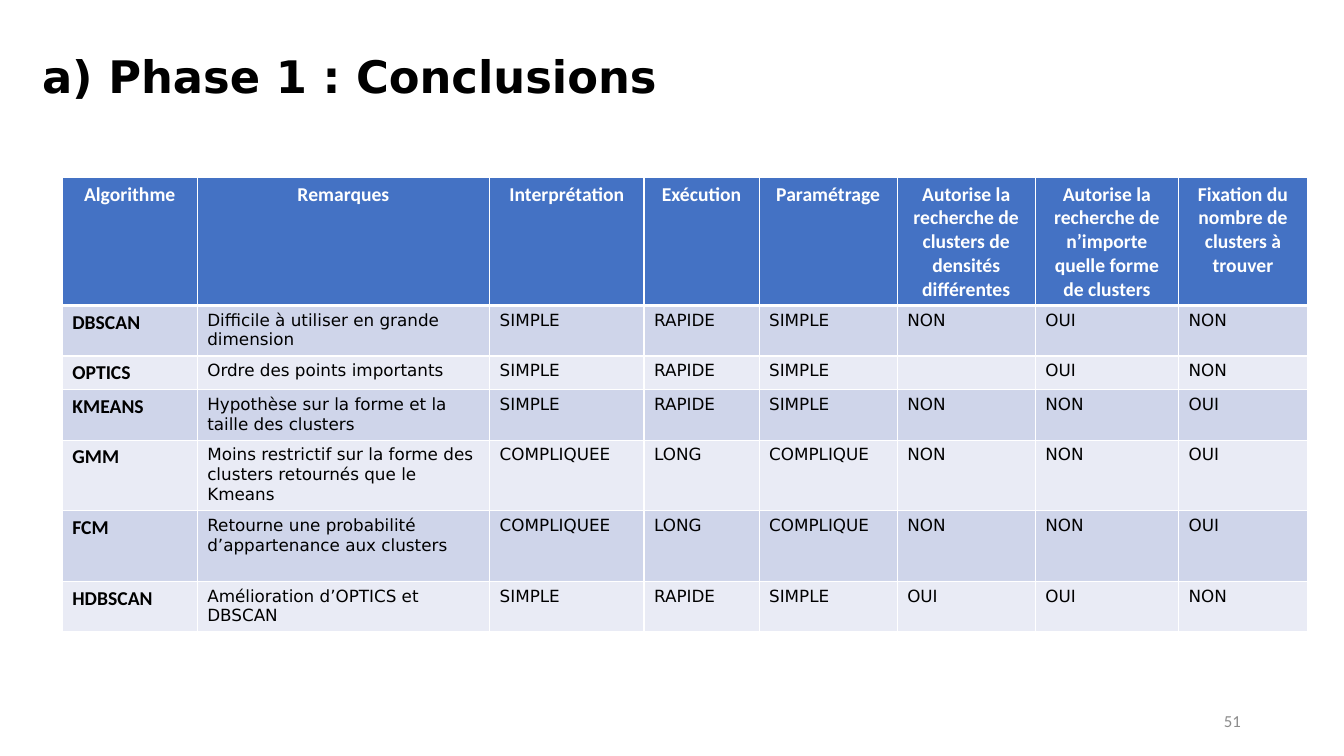
import pptx
import pptx.dml.color
import pptx.enum.text
import pptx.oxml
import pptx.oxml.ns
import pptx.util
from pptx.util import Cm

ALIGN = pptx.enum.text.PP_ALIGN
ANCHOR = pptx.enum.text.MSO_ANCHOR
COLORS = {
    "text": "000000",
    "page number": "8C8C8C",
    "header": "4472C4",
    "odd row": "CFD5EA",
    "even row": "E9EBF5",
    "white": "FFFFFF",
}
COLUMN_WIDTHS = [3.4, 7.37, 3.89, 2.9, 3.48, 3.48, 3.61, 3.25]
ROW_HEIGHTS = [3.23, 1.27, 0.84, 1.27, 1.78, 1.78, 1.27]
ROWS = [
    ["Algorithme", "Remarques", "Interprétation", "Exécution", "Paramétrage",
     "Autorise la recherche de clusters de densités différentes",
     "Autorise la recherche de n’importe quelle forme de clusters",
     "Fixation du nombre de clusters à trouver"],
    ["DBSCAN", "Difficile à utiliser en grande dimension",
     "SIMPLE", "RAPIDE", "SIMPLE", "NON", "OUI", "NON"],
    ["OPTICS", "Ordre des points importants",
     "SIMPLE", "RAPIDE", "SIMPLE", "", "OUI", "NON"],
    ["KMEANS", "Hypothèse sur la forme et la taille des clusters",
     "SIMPLE", "RAPIDE", "SIMPLE", "NON", "NON", "OUI"],
    ["GMM", "Moins restrictif sur la forme des clusters retournés que le Kmeans",
     "COMPLIQUEE", "LONG", "COMPLIQUE", "NON", "NON", "OUI"],
    ["FCM", "Retourne une probabilité d’appartenance aux clusters",
     "COMPLIQUEE", "LONG", "COMPLIQUE", "NON", "NON", "OUI"],
    ["HDBSCAN", "Amélioration d’OPTICS et DBSCAN",
     "SIMPLE", "RAPIDE", "SIMPLE", "OUI", "OUI", "NON"],
]


def color(name):
    return pptx.dml.color.RGBColor.from_string(COLORS[name])


def write(text_frame, text, font_name, size, color_name, bold=False, align=ALIGN.LEFT):
    text_frame.word_wrap = True
    paragraph = text_frame.paragraphs[0]
    paragraph.text = text
    paragraph.alignment = align
    paragraph.font.name = font_name
    paragraph.font.size = pptx.util.Pt(size)
    paragraph.font.bold = bold
    paragraph.font.color.rgb = color(color_name)


def add_text(slide, left, top, width, height, text, *style, anchor=ANCHOR.TOP, **options):
    box = slide.shapes.add_textbox(Cm(left), Cm(top), Cm(width), Cm(height))
    box.text_frame.vertical_anchor = anchor
    write(box.text_frame, text, *style, **options)


def set_borders(cell, bottom_width):
    properties = cell._tc.get_or_add_tcPr()
    widths = {"lnL": 1, "lnR": 1, "lnT": 1, "lnB": bottom_width}
    for position, (side, width) in enumerate(widths.items()):
        properties.insert(position, pptx.oxml.parse_xml(
            f'<a:{side} {pptx.oxml.ns.nsdecls("a")} w="{pptx.util.Pt(width)}">'
            f'<a:solidFill><a:srgbClr val="{COLORS["white"]}"/></a:solidFill></a:{side}>'))


def keep_empty_cell_small(cell):
    cell.text_frame.paragraphs[0]._p.append(pptx.oxml.parse_xml(
        f'<a:endParaRPr {pptx.oxml.ns.nsdecls("a")} sz="1200"/>'))


def fill_cell(cell, text, row, column):
    cell.fill.solid()
    if row == 0:
        cell.fill.fore_color.rgb = color("header")
        write(cell.text_frame, text, "Calibri", 14, "white", bold=True, align=ALIGN.CENTER)
    else:
        cell.fill.fore_color.rgb = color("odd row" if row % 2 else "even row")
        if column == 0:
            write(cell.text_frame, text, "Calibri", 14, "text", bold=True)
        else:
            write(cell.text_frame, text, "DejaVu Sans", 12, "text")
    if not text:
        keep_empty_cell_small(cell)
    set_borders(cell, 3 if row == 0 else 1)


def add_comparison_table(slide, left, top):
    table = slide.shapes.add_table(
        len(ROWS), len(COLUMN_WIDTHS), Cm(left), Cm(top),
        Cm(sum(COLUMN_WIDTHS)), Cm(sum(ROW_HEIGHTS))).table
    for column, width in zip(table.columns, COLUMN_WIDTHS):
        column.width = Cm(width)
    for row, height in zip(table.rows, ROW_HEIGHTS):
        row.height = Cm(height)
    for row, texts in enumerate(ROWS):
        for column, text in enumerate(texts):
            fill_cell(table.cell(row, column), text, row, column)


def main():
    presentation = pptx.Presentation()
    presentation.slide_width = Cm(33.87)
    presentation.slide_height = Cm(19.05)
    slide = presentation.slides.add_slide(presentation.slide_layouts[6])
    add_text(slide, 23.9, 17.65, 7.62, 1.02, "51", "Calibri", 12, "page number",
             align=ALIGN.RIGHT, anchor=ANCHOR.MIDDLE)
    add_comparison_table(slide, 1.57, 4.47)
    add_text(slide, 0.81, 1.1, 32.39, 2.16, "a) Phase 1 : Conclusions",
             "DejaVu Sans", 32, "text", bold=True)
    presentation.save("out.pptx")


if __name__ == "__main__":
    main()
